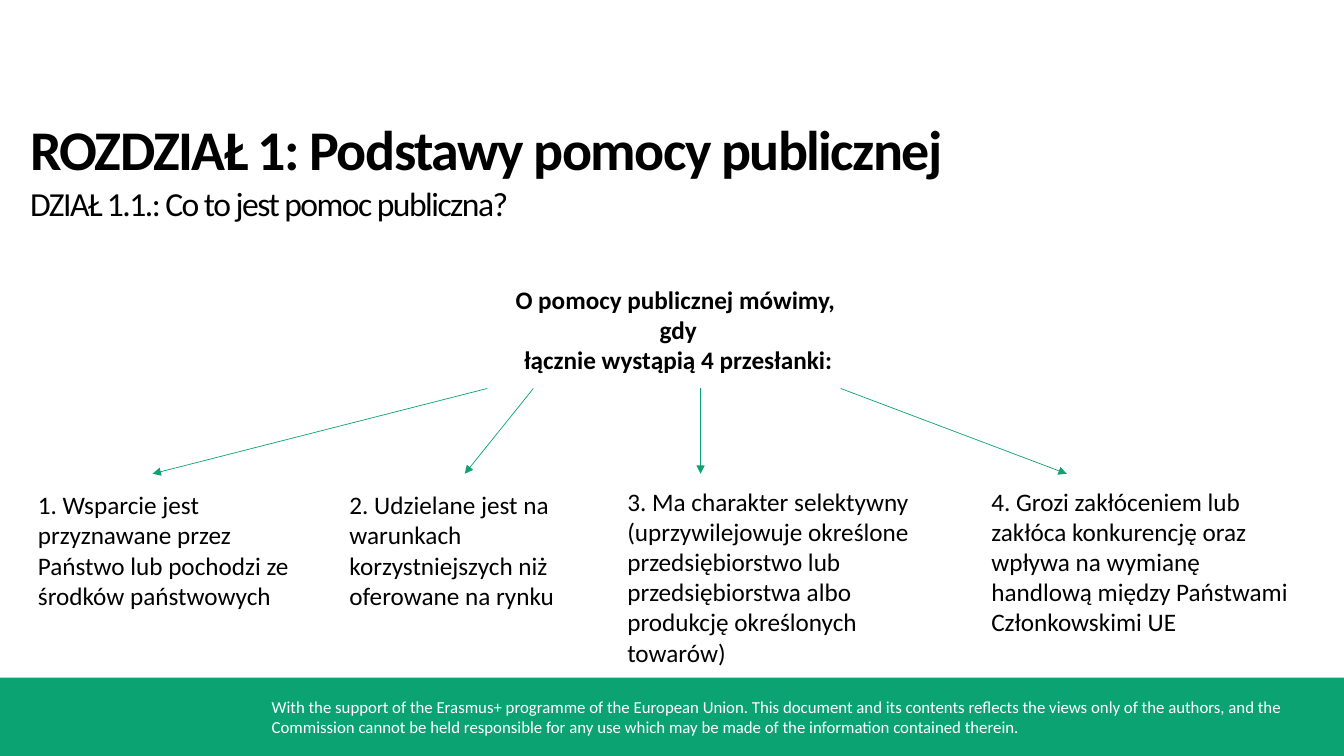
from dataclasses import dataclass

from lxml import etree
from pptx import Presentation
from pptx import util as u
from pptx.dml.color import RGBColor
from pptx.enum import shapes, text
from pptx.oxml.ns import qn


@dataclass(frozen=True)
class Theme:
    font: str = "Calibri"
    green: RGBColor = RGBColor(0x0C, 0xA3, 0x73)
    black: RGBColor = RGBColor(0, 0, 0)
    white: RGBColor = RGBColor(255, 255, 255)
    chapter: int = 40
    section: int = 24
    body: int = 18
    credit: int = 12
    arrow: float = 0.5
    heading_tracking: float = -1.1


THEME = Theme()

FOOTER = (
    "With the support of the Erasmus+ programme of the European Union. "
    "This document and its contents reflects the views only of the authors, "
    "and the Commission cannot be held responsible for any use which may be "
    "made of the information contained therein."
)
INTRO = ["O pomocy publicznej mówimy, ", "gdy", "łącznie wystąpią 4 przesłanki:"]
CONDITIONS = [
    ((20, 346, 197, 95),
     "1. Wsparcie jest przyznawane przez Państwo lub pochodzi ze środków państwowych"),
    ((242.5, 346, 204, 95),
     "2. Udzielane jest na warunkach korzystniejszych niż oferowane na rynku"),
    ((441, 343.5, 228, 139),
     "3. Ma charakter selektywny (uprzywilejowuje określone przedsiębiorstwo "
     "lub przedsiębiorstwa albo produkcję określonych towarów)"),
    ((701, 343.5, 228, 117),
     "4. Grozi zakłóceniem lub zakłóca konkurencję oraz wpływa na wymianę "
     "handlową między Państwami Członkowskimi UE"),
]
ARROW_TOP, ARROW_BOTTOM = 277.5, 338.4
ARROW_SPANS = [(348, 109), (381, 332), (500.4, 500.4), (600.5, 762)]


def add_run(paragraph, words, size, color=THEME.black, bold=False, tracking=0):
    run = paragraph.add_run()
    run.text = words
    run.font.name = THEME.font
    run.font.size = u.Pt(size)
    run.font.bold = bold
    run.font.color.rgb = color
    if tracking:
        run.font._element.set("spc", str(round(tracking * 100)))


def add_text(slide, place, lines, align=text.PP_ALIGN.LEFT, gap=0):
    frame = slide.shapes.add_textbox(*map(u.Pt, place)).text_frame
    frame.word_wrap = True
    frame.auto_size = text.MSO_AUTO_SIZE.SHAPE_TO_FIT_TEXT
    for index, (words, style) in enumerate(lines):
        paragraph = frame.add_paragraph() if index else frame.paragraphs[0]
        paragraph.alignment = align
        if index and gap:
            paragraph.space_before = u.Pt(gap)
        add_run(paragraph, words, **style)


def add_band(slide, place):
    band = slide.shapes.add_shape(shapes.MSO_SHAPE.RECTANGLE, *map(u.Pt, place))
    band.shadow.inherit = False
    band.fill.solid()
    band.fill.fore_color.rgb = THEME.green
    band.line.fill.background()


def add_arrow(slide, start_x, end_x):
    ends = map(u.Pt, (start_x, ARROW_TOP, end_x, ARROW_BOTTOM))
    arrow = slide.shapes.add_connector(shapes.MSO_CONNECTOR.STRAIGHT, *ends)
    arrow.line.color.rgb = THEME.green
    arrow.line.width = u.Pt(THEME.arrow)
    etree.SubElement(arrow.line._get_or_add_ln(), qn("a:tailEnd"), type="triangle")
    etree.SubElement(arrow._element.spPr, qn("a:effectLst"))


def main():
    deck = Presentation()
    deck.slide_width, deck.slide_height = u.Pt(960), u.Pt(540)
    slide = deck.slides.add_slide(deck.slide_layouts[6])

    add_band(slide, (0, 484, 960, 56))
    add_text(slide, (187, 494, 750, 36),
             [(FOOTER, dict(size=THEME.credit, color=THEME.white))])

    tracking = THEME.heading_tracking
    add_text(slide, (14.5, 78, 845, 86), [
        ("ROZDZIAŁ 1: Podstawy pomocy publicznej",
         dict(size=THEME.chapter, bold=True, tracking=tracking)),
        ("DZIAŁ 1.1.: Co to jest pomoc publiczna?",
         dict(size=THEME.section, tracking=tracking)),
    ], gap=1.1)

    add_text(slide, (14, 199.5, 941, 73),
             [(line, dict(size=THEME.body, bold=True)) for line in INTRO],
             align=text.PP_ALIGN.CENTER)

    for place, condition in CONDITIONS:
        add_text(slide, place, [(condition, dict(size=THEME.body))])
    for start_x, end_x in ARROW_SPANS:
        add_arrow(slide, start_x, end_x)

    deck.save("out.pptx")


if __name__ == "__main__":
    main()
